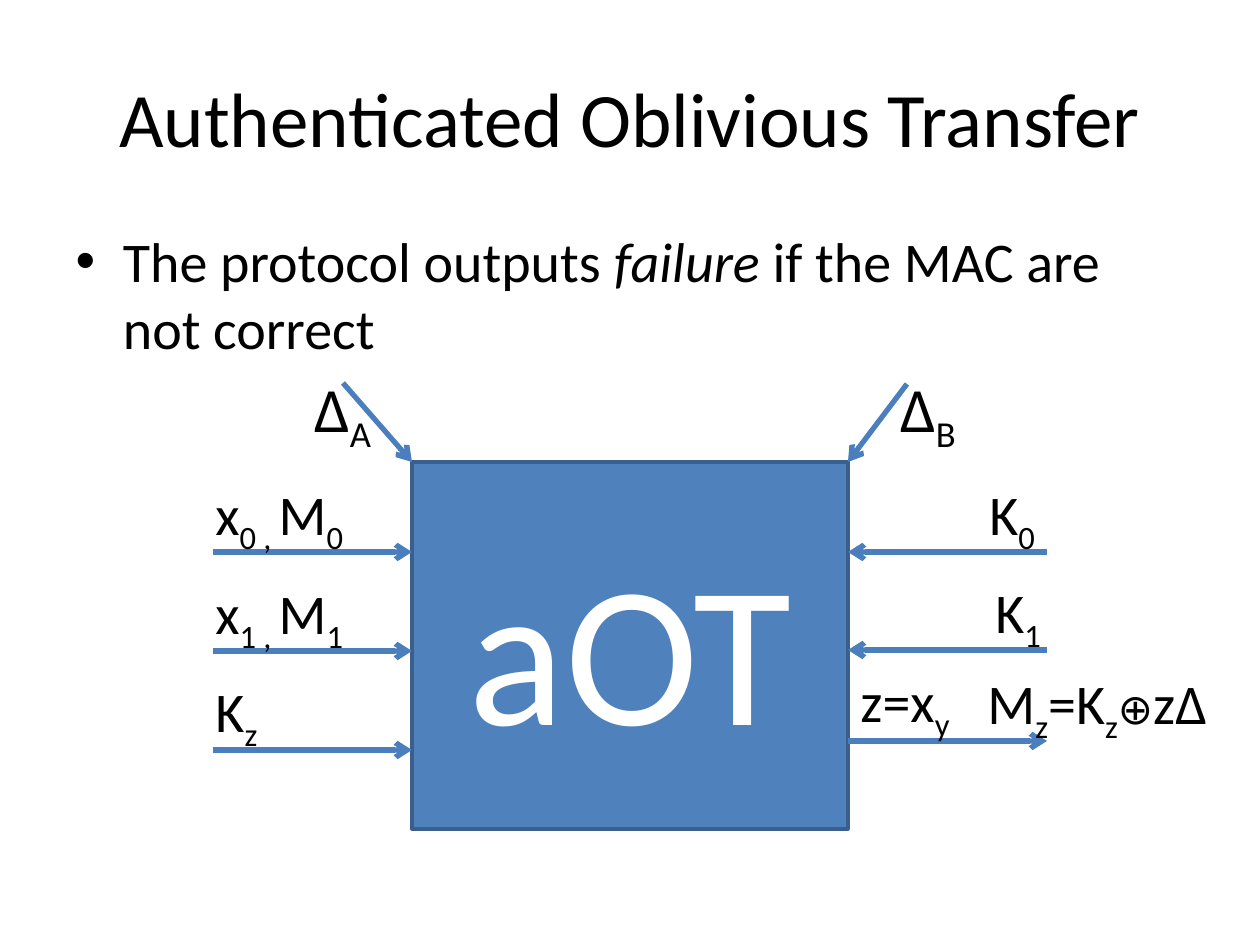
from lxml.etree import SubElement
from pptx import Presentation
from pptx.dml.color import RGBColor
from pptx.enum.shapes import MSO_CONNECTOR, MSO_SHAPE
from pptx.enum.text import MSO_ANCHOR, PP_ALIGN
from pptx.oxml.ns import qn
from pptx.util import Emu, Pt

EMU_PER_PX = 914400 / 126
FONT = "Calibri"
BLACK = RGBColor(0x00, 0x00, 0x00)
WHITE = RGBColor(0xFF, 0xFF, 0xFF)
BOX_FILL = RGBColor(0x4F, 0x81, 0xBD)
BOX_LINE = RGBColor(0x3A, 0x5F, 0x8C)
ARROW_BLUE = RGBColor(0x4B, 0x7E, 0xBC)

# Protocol box edges and the outer ends of the arrows
BOX_LEFT, BOX_TOP, BOX_RIGHT, BOX_BOTTOM = 412, 462, 848, 829
OUTER_LEFT, OUTER_RIGHT = 213, 1047
SENDER_LEFT = 203


def px(length):
    return Emu(round(length * EMU_PER_PX))


def place(shape, left, top, width, height):
    shape.left, shape.top = px(left), px(top)
    shape.width, shape.height = px(width), px(height)


def set_font(font, size, color=BLACK):
    font.name = FONT
    font.size = Pt(size)
    font.color.rgb = color


def fill_title(title, text):
    place(title, 63, 38, 1134, 158)
    title.text_frame.text = text
    title.text_frame.vertical_anchor = MSO_ANCHOR.MIDDLE
    paragraph = title.text_frame.paragraphs[0]
    paragraph.alignment = PP_ALIGN.CENTER
    set_font(paragraph.font, 44)


def fill_body(body, before, emphasis, after):
    place(body, 63, 220, 1134, 173)
    paragraph = body.text_frame.paragraphs[0]
    set_font(paragraph.font, 32)
    for text in (before, emphasis, after):
        run = paragraph.add_run()
        run.text = text
        run.font.italic = text == emphasis


def add_protocol_box(slide, text):
    box = slide.shapes.add_shape(
        MSO_SHAPE.RECTANGLE, px(BOX_LEFT), px(BOX_TOP),
        px(BOX_RIGHT - BOX_LEFT), px(BOX_BOTTOM - BOX_TOP))
    box.shadow.inherit = False
    box.fill.solid()
    box.fill.fore_color.rgb = BOX_FILL
    box.line.color.rgb = BOX_LINE
    box.line.width = Pt(2)
    box.text_frame.text = text
    box.text_frame.vertical_anchor = MSO_ANCHOR.MIDDLE
    paragraph = box.text_frame.paragraphs[0]
    paragraph.alignment = PP_ALIGN.CENTER
    set_font(paragraph.font, 115, WHITE)


def add_arrow(slide, start, end):
    arrow = slide.shapes.add_connector(
        MSO_CONNECTOR.STRAIGHT, *map(px, start), *map(px, end))
    arrow.line.color.rgb = ARROW_BLUE
    arrow.line.width = Pt(3)
    SubElement(arrow.line._get_or_add_ln(), qn("a:tailEnd"), type="arrow")
    SubElement(arrow._element.spPr, qn("a:effectLst"))


def add_label(slide, left, top, width, parts, size=32):
    """Write parts in turn: '_' starts a subscript, '⊕' is set smaller."""
    label = slide.shapes.add_textbox(
        px(left), px(top), px(width), px(size * 2.5))
    label.text_frame.word_wrap = True
    paragraph = label.text_frame.paragraphs[0]
    set_font(paragraph.font, size)
    for part in parts:
        run = paragraph.add_run()
        run.text = part.removeprefix("_")
        if part.startswith("_"):
            run._r.get_or_add_rPr().set("baseline", "-25000")
        elif part == "⊕":
            run.font.size = Pt(24)


def main():
    prs = Presentation()
    prs.slide_width, prs.slide_height = px(1260), px(945)
    slide = prs.slides.add_slide(prs.slide_layouts[1])

    fill_title(slide.shapes.title, "Authenticated Oblivious Transfer")
    fill_body(slide.placeholders[1], "The protocol outputs ", "failure",
              " if the MAC are not correct")
    add_protocol_box(slide, "aOT")

    # Left party's inputs
    for y in (552, 651, 750):
        add_arrow(slide, (OUTER_LEFT, y), (BOX_LEFT, y))
    add_label(slide, SENDER_LEFT, 473, 189, ["x", "_0 , ", "M", "_0"])
    add_label(slide, SENDER_LEFT, 572, 164, ["x", "_1 , ", "M", "_1"])
    add_label(slide, SENDER_LEFT, 670, 69, ["K", "_z"])

    # Right party's inputs
    for y in (552, 650):
        add_arrow(slide, (OUTER_RIGHT, y), (BOX_RIGHT, y))
    add_label(slide, 977, 473, 75, ["K", "_0"])
    add_label(slide, 983, 571, 75, ["K", "_1"])

    # Right party's outputs
    add_arrow(slide, (BOX_RIGHT, 741), (OUTER_RIGHT, 741))
    add_label(slide, BOX_RIGHT, 660, 135, ["z=x", "_y"])
    add_label(slide, 975, 662, 260, ["M", "_z", "=K", "_z", "⊕", "zΔ"])

    # Global keys entering at the top corners
    add_arrow(slide, (343, 383), (BOX_LEFT, BOX_TOP))
    add_arrow(slide, (907, 384), (BOX_RIGHT, BOX_TOP))
    add_label(slide, 302, 363, 90, ["Δ", "_A"], 36)
    add_label(slide, 888, 363, 88, ["Δ", "_B"], 36)

    prs.save("out.pptx")


if __name__ == "__main__":
    main()
